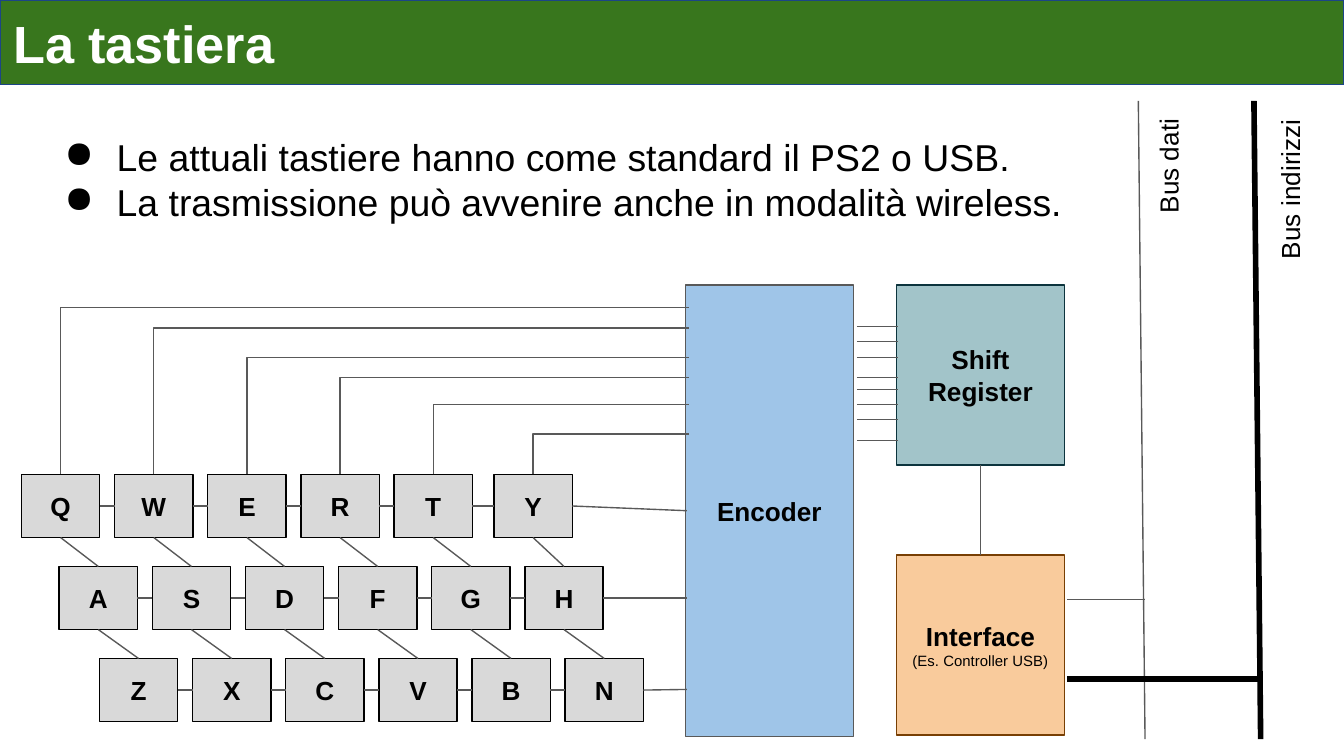
from collections import namedtuple

from lxml.etree import SubElement
from pptx import Presentation
from pptx.dml.color import RGBColor
from pptx.enum.shapes import MSO_CONNECTOR, MSO_SHAPE
from pptx.enum.text import MSO_ANCHOR, PP_ALIGN
from pptx.oxml.ns import qn
from pptx.util import Inches, Pt

COLORS = {
    "title": "38761D", "title_line": "1C4587", "white": "FFFFFF",
    "black": "000000", "wire": "595959", "key": "D9D9D9",
    "encoder": "9FC5E8", "register": "A2C4C9", "register_line": "0C343D",
    "interface": "F9CB9C", "interface_line": "783F04",
}
FONT = "Arial"
COLUMNS, ROWS = 100, 56.25  # square cells
KEYS = ["QWERTY", "ASDFGH", "ZXCVBN"]
KEY_W, KEY_H = 5.83, 4.7
KEY_PITCH, ROW_PITCH = 6.93, 6.85
ROW_SHIFTS = [0, 2.8, 5.8]
LAST_KEY_GAP = 0.5  # extra space before Y
WIRE_ROWS = [22.9, 24.4, 26.6, 28.1, 30.1, 32.3]
DATA_ROWS = [24.3, 25.4, 26.6, 28.1, 29, 30.1, 31.2, 32.8]

Box = namedtuple("Box", "x y w h")


def cells(n):
    """Length of n grid cells."""
    return Inches(n * 10 / COLUMNS)


def color(name):
    return RGBColor.from_string(COLORS[name])


def add_run(p, text, size, bold=False, ink="black"):
    r = p.add_run()
    r.text = text
    r.font.name, r.font.size, r.font.bold = FONT, Pt(size), bold
    r.font.color.rgb = color(ink)


def set_frame(tf, inset):
    tf.word_wrap = True
    tf.margin_left = tf.margin_right = cells(1)
    tf.margin_top = tf.margin_bottom = cells(inset)


def block(s, box, fill, line, align=PP_ALIGN.CENTER, inset=1):
    """Outlined rectangle; returns its first paragraph."""
    sp = s.shapes.add_shape(MSO_SHAPE.RECTANGLE, *map(cells, box))
    sp.shadow.inherit = False
    sp.fill.solid()
    sp.fill.fore_color.rgb = color(fill)
    sp.line.color.rgb = color(line)
    sp.line.width = Pt(0.75)
    set_frame(sp.text_frame, inset)
    sp.text_frame.vertical_anchor = MSO_ANCHOR.MIDDLE
    p = sp.text_frame.paragraphs[0]
    p.alignment = align
    return p


def text_box(s, box):
    sp = s.shapes.add_textbox(*map(cells, box))
    set_frame(sp.text_frame, 1)
    return sp


def wire(s, x1, y1, x2, y2, ink="wire", width=0.75):
    cx = s.shapes.add_connector(MSO_CONNECTOR.STRAIGHT, *map(cells, (x1, y1, x2, y2)))
    cx.line.color.rgb = color(ink)
    cx.line.width = Pt(width)
    SubElement(cx._element.spPr, qn("a:effectLst"))
    return cx


def corner_wire(s, x1, y1, x2, y2):
    """Wire that runs up from the first point, then right to the second."""
    cx = wire(s, x1, y1, x2, y2)
    rise, run = y1 - y2, x2 - x1
    sp_pr = cx._element.spPr
    sp_pr.find(qn("a:prstGeom")).set("prst", "bentConnector2")
    xfrm = sp_pr.find(qn("a:xfrm"))
    xfrm.attrib.pop("flipV", None)
    xfrm.set("rot", str(270 * 60000))
    cx.left, cx.top = cells((x1 + x2 - rise) / 2), cells((y1 + y2 - run) / 2)
    cx.width, cx.height = cells(rise), cells(run)


def title_bar(s, box):
    p = block(s, box, "title", "title_line", PP_ALIGN.LEFT, 0.5)
    add_run(p, "La tastiera", 28, True, "white")


def bullet_list(s, box, lines):
    tf = text_box(s, box).text_frame
    for i, line in enumerate(lines):
        p = tf.paragraphs[0] if i == 0 else tf.add_paragraph()
        p_pr = p._p.get_or_add_pPr()
        p_pr.set("marL", str(cells(5)))
        p_pr.set("indent", str(-cells(3.9)))
        SubElement(SubElement(p_pr, qn("a:buClr")), qn("a:srgbClr")).set("val", COLORS["black"])
        SubElement(p_pr, qn("a:buChar")).set("char", "●")
        add_run(p, line, 20)


def key_box(box, row, col):
    gap = LAST_KEY_GAP if (row, col) == (0, 5) else 0
    return Box(box.x + ROW_SHIFTS[row] + col * KEY_PITCH + gap,
               box.y + row * ROW_PITCH, KEY_W, KEY_H)


def keyboard(s, box, encoder):
    """Three rows of keys, wired to each other and to the encoder."""
    rows = [[key_box(box, r, c) for c in range(len(letters))]
            for r, letters in enumerate(KEYS)]
    for letters, keys in zip(KEYS, rows):
        for letter, key in zip(letters, keys):
            add_run(block(s, key, "key", "black"), letter, 14, True)
        for a, b in zip(keys, keys[1:]):
            wire(s, a.x + a.w, a.y + a.h / 2, b.x, b.y + b.h / 2)
    for upper, lower in zip(rows, rows[1:]):
        for a, b in zip(upper, lower):
            wire(s, a.x + a.w / 2, a.y + a.h, b.x + b.w / 2, b.y)
    for keys, end_y in zip(rows, [38, 44.5, 51.3]):
        last = keys[-1]
        wire(s, last.x + last.w, last.y + last.h / 2, encoder.x + 0.1, end_y)
    for key, y in zip(rows[0], WIRE_ROWS):
        corner_wire(s, key.x + key.w / 2, key.y, encoder.x + 0.25, y)


def controller(s, encoder, register, interface):
    """Encoder, shift register and interface with the wires between them."""
    add_run(block(s, encoder, "encoder", "wire"), "Encoder", 14, True)
    add_run(block(s, register, "register", "register_line"), "Shift Register", 14, True)
    p = block(s, interface, "interface", "interface_line")
    add_run(p, "Interface ", 14, True)
    add_run(p, "(Es. Controller USB)", 8)
    for y in DATA_ROWS:
        wire(s, encoder.x + encoder.w + 0.25, y, register.x + 0.1, y)
    middle = register.x + register.w / 2
    wire(s, middle, register.y + register.h, middle, interface.y)


def bus(s, box, label, label_box, tap, ink, width):
    """Slanted bus line, its tap to the interface and its upright label."""
    wire(s, box.x, box.y, box.x + box.w, box.y + box.h, ink, width)
    wire(s, *tap, box.x + box.w, tap[1], ink, width)
    sp = text_box(s, label_box)
    sp.rotation = 270
    p = sp.text_frame.paragraphs[0]
    p.alignment = PP_ALIGN.RIGHT
    add_run(p, label, 14)


def main():
    prs = Presentation()
    prs.slide_width, prs.slide_height = cells(COLUMNS), cells(ROWS)
    s = prs.slides.add_slide(prs.slide_layouts[6])
    encoder = Box(51, 21.2, 12.5, 33.6)
    register = Box(66.7, 21.2, 12.5, 13.4)
    interface = register._replace(y=41.3)

    title_bar(s, Box(0, 0, COLUMNS, 6.3))
    bullet_list(s, Box(2.7, 9, 93.1, 9.5), [
        "Le attuali tastiere hanno come standard il PS2 o USB.",
        "La trasmissione può avvenire anche in modalità wireless.",
    ])
    controller(s, encoder, register, interface)
    keyboard(s, Box(1.6, 35.3, 46.3, 18.4), encoder)
    tap_x = interface.x + interface.w + 0.2
    bus(s, Box(84.7, 7.5, 0.5, 47.5), "Bus dati",
        Box(80.8, 11.8, 11.7, 3.8), (tap_x, 44.6), "wire", 0.75)
    bus(s, Box(93.3, 7.5, 0.5, 47.5), "Bus indirizzi",
        Box(89, 12.7, 13.4, 3.8), (tap_x, 50.5), "black", 3)
    prs.save("out.pptx")


if __name__ == "__main__":
    main()
